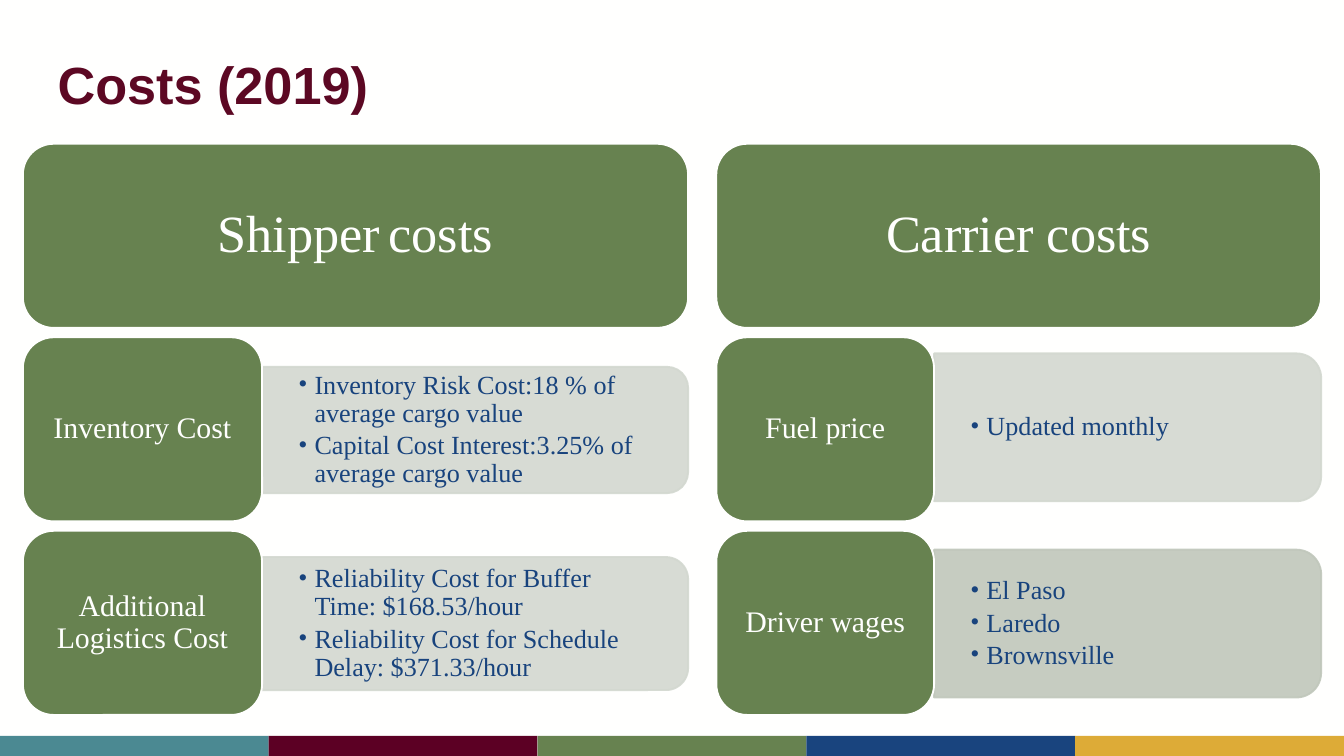
"""Build the slide that sets shipper costs beside carrier costs."""
from dataclasses import dataclass

from lxml import etree
from pptx import Presentation
from pptx import util as u
from pptx.dml.color import RGBColor
from pptx.enum import shapes, text
from pptx.oxml.ns import qn

GREEN, WHITE, NAVY = "678250", "FFFFFE", "18437D"
PALE, SAGE = "D3D8D0", "C0C7BB"
SERIF = "Times New Roman"
STRIPES = ["4B8992", "5C0024", GREEN, "19447E", "DDAB37"]
SLIDE_WIDTH = 10
SLIDE_HEIGHT = SLIDE_WIDTH * 9 / 16
STRIPE_WIDTH, STRIPE_HEIGHT = SLIDE_WIDTH / len(STRIPES), 0.15
HEADER_TOP, ROW_TOP, ROW_PITCH, TILE_HEIGHT = 1.07, 2.51, 1.44, 1.37


@dataclass
class Run:
    words: str
    size: float


@dataclass
class Cost:
    label: str
    details: list[str]
    panel_height: float
    panel_middle: float
    tint: str = PALE


@dataclass
class Group:
    title: list[Run]
    left: float
    width: float
    label_width: float
    panel_width: float
    costs: list[Cost]


GROUPS = [
    Group([Run("Shipper", 28), Run(" ", 18), Run("costs", 28)], 0.17, 4.95, 1.78, 3.17, [
        Cost("Inventory Cost", ["Inventory Risk Cost:18 % of average cargo value",
                                "Capital Cost Interest:3.25% of average cargo value"], 0.94, 3.2),
        Cost("Additional Logistics Cost", ["Reliability Cost for Buffer Time: $168.53/hour",
                                           "Reliability Cost for Schedule Delay: $371.33/hour"],
             0.99, 4.64),
    ]),
    Group([Run("Carrier costs", 28)], 5.33, 4.5, 1.62, 2.88, [
        Cost("Fuel price", ["Updated monthly"], 1.1, 3.18),
        Cost("Driver wages", ["El Paso", "Laredo", "Brownsville"], 1.1, 4.64, SAGE),
    ]),
]


def rgb(value: str) -> RGBColor:
    """Turn a hex string into a colour."""
    return RGBColor.from_string(value)


def set_frame(frame, inset_x: float, inset_y: float) -> None:
    """Wrap the text, centre it vertically and set its insets."""
    frame.word_wrap = True
    frame.vertical_anchor = text.MSO_ANCHOR.MIDDLE
    frame.margin_left = frame.margin_right = u.Inches(inset_x)
    frame.margin_top = frame.margin_bottom = u.Inches(inset_y)


def add_run(paragraph, run: Run, color: str, font: str = SERIF, bold: bool = False) -> None:
    """Append one styled run to a paragraph."""
    paragraph.line_spacing = 0.9
    piece = paragraph.add_run()
    piece.text = run.words
    piece.font.size, piece.font.name, piece.font.bold = u.Pt(run.size), font, bold
    piece.font.color.rgb = rgb(color)


def add_box(slide, kind, left: float, top: float, width: float, height: float, fill: str):
    """Add a flat filled shape without an outline."""
    box = slide.shapes.add_shape(kind, u.Inches(left), u.Inches(top),
                                 u.Inches(width), u.Inches(height))
    box.shadow.inherit = False
    box.fill.solid()
    box.fill.fore_color.rgb = rgb(fill)
    box.line.fill.background()
    return box


def set_line(box, color: str) -> None:
    """Give a shape a one-point outline."""
    box.line.color.rgb = rgb(color)
    box.line.width = u.Pt(1)


def add_tile(slide, left: float, top: float, width: float, runs: list[Run],
             inset_x: float, inset_y: float) -> None:
    """Draw a green rounded tile with centred text."""
    tile = add_box(slide, shapes.MSO_SHAPE.ROUNDED_RECTANGLE, left, top, width, TILE_HEIGHT, GREEN)
    set_line(tile, WHITE)
    set_frame(tile.text_frame, inset_x, inset_y)
    paragraph = tile.text_frame.paragraphs[0]
    paragraph.alignment = text.PP_ALIGN.CENTER
    for run in runs:
        add_run(paragraph, run, WHITE)


def add_panel(slide, left: float, width: float, cost: Cost) -> None:
    """Draw the tinted panel, rounded on its right side, with its bullets."""
    middle_x, height = left + width / 2, cost.panel_height
    panel = add_box(slide, shapes.MSO_SHAPE.ROUND_2_SAME_RECTANGLE, middle_x - height / 2,
                    cost.panel_middle - width / 2, height, width, cost.tint)
    panel.rotation = 90
    set_line(panel, cost.tint)
    for color in panel._element.spPr.iter(qn("a:srgbClr")):
        etree.SubElement(color, qn("a:alpha")).set("val", "90000")

    text_height = height - 0.1
    box = slide.shapes.add_textbox(u.Inches(left), u.Inches(cost.panel_middle - text_height / 2),
                                   u.Inches(width - 0.05), u.Inches(text_height))
    set_frame(box.text_frame, 0.27, 0.14)
    for index, detail in enumerate(cost.details):
        paragraph = box.text_frame.add_paragraph() if index else box.text_frame.paragraphs[0]
        paragraph.level = 1
        properties = paragraph._p.get_or_add_pPr()
        properties.set("marL", str(u.Inches(0.12)))
        properties.set("indent", str(u.Inches(-0.12)))
        etree.SubElement(properties, qn("a:buFont")).set("typeface", SERIF)
        etree.SubElement(properties, qn("a:buChar")).set("char", "•")
        paragraph.space_after = u.Pt(2.1)
        add_run(paragraph, Run(detail, 14), NAVY)


def add_group(slide, group: Group) -> None:
    """Draw one column: its header and its cost rows."""
    add_tile(slide, group.left, HEADER_TOP, group.width, group.title, 0.12, 0.06)
    for row, cost in enumerate(group.costs):
        add_panel(slide, group.left + group.label_width, group.panel_width, cost)
        add_tile(slide, group.left, ROW_TOP + row * ROW_PITCH, group.label_width,
                 [Run(cost.label, 16)], 0.07, 0.03)


def main() -> None:
    """Build and save the slide."""
    deck = Presentation()
    deck.slide_width, deck.slide_height = u.Inches(SLIDE_WIDTH), u.Inches(SLIDE_HEIGHT)
    slide = deck.slides.add_slide(deck.slide_layouts[6])
    slide.background.fill.solid()
    slide.background.fill.fore_color.rgb = rgb(WHITE)

    for index, color in enumerate(STRIPES):
        add_box(slide, shapes.MSO_SHAPE.RECTANGLE, index * STRIPE_WIDTH,
                SLIDE_HEIGHT - STRIPE_HEIGHT, STRIPE_WIDTH, STRIPE_HEIGHT, color)

    title = slide.shapes.add_textbox(u.Inches(0.33), u.Inches(0.3), u.Inches(9.35), u.Inches(0.7))
    set_frame(title.text_frame, 0.1, 0.05)
    add_run(title.text_frame.paragraphs[0], Run("Costs (2019)", 28), "5C0823", "Arial", True)

    for group in GROUPS:
        add_group(slide, group)
    deck.save("out.pptx")


if __name__ == "__main__":
    main()
